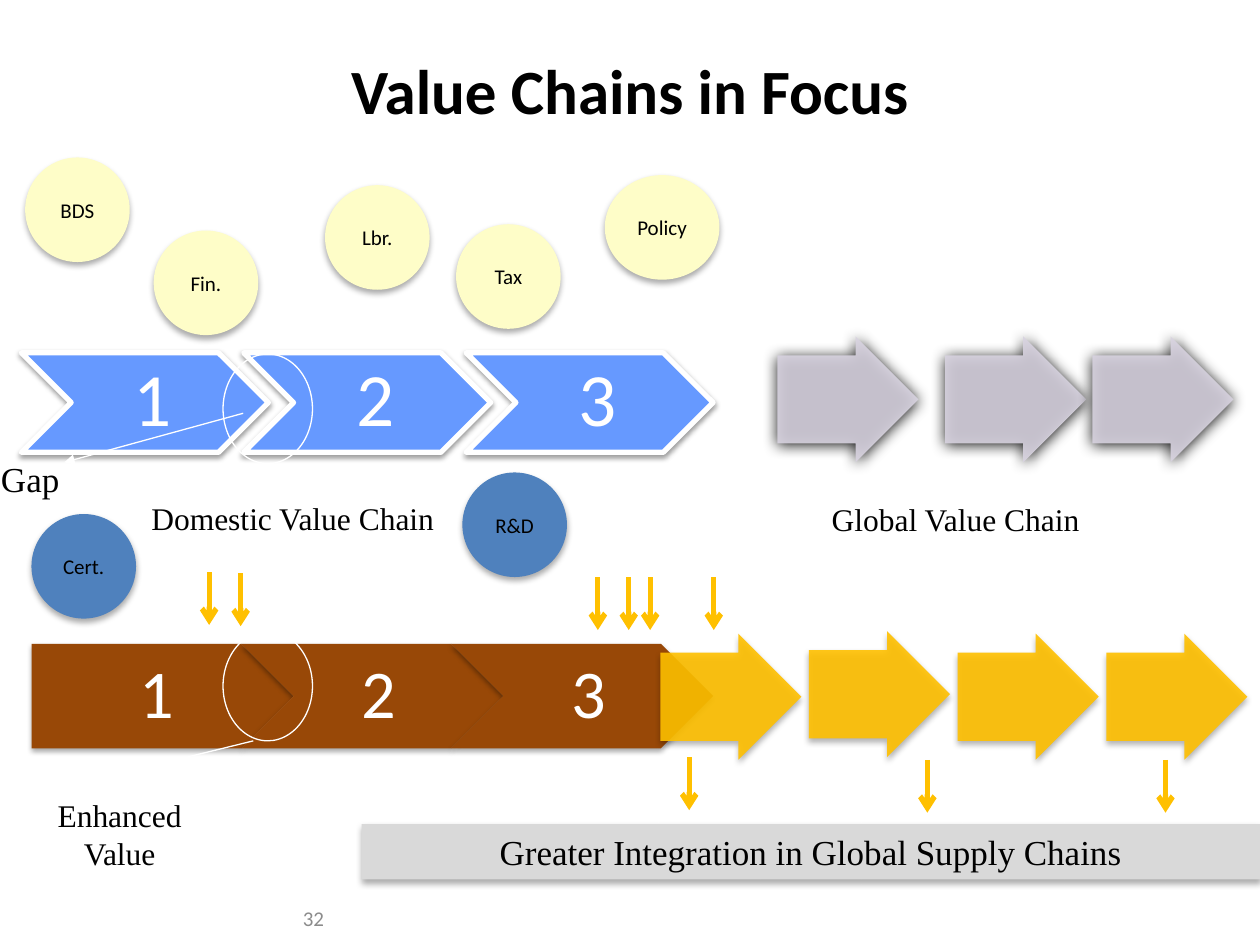
from lxml.etree import SubElement
from pptx import Presentation
from pptx.dml.color import RGBColor
from pptx.enum.shapes import MSO_CONNECTOR as Link, MSO_SHAPE as Shape
from pptx.enum.text import MSO_ANCHOR as Anchor, PP_ALIGN as Align
from pptx.oxml.ns import qn
from pptx.util import Inches, Pt

# Grid of square cells, 100 columns by 75 rows
CELL = Inches(0.1)
COLUMNS, ROWS = 100, 75

COLORS = {
    "text": "000000", "white": "FFFFFF", "page_number": "8C8C8C",
    "domestic": "6699FF", "enhanced": "984807", "global": "D8D3E0",
    "gold": "FFC000", "service": "FEFDC8", "support": "4F81BD",
    "banner": "D9D9D9",
}
SANS, SERIF = "Calibri", "Times New Roman"

# Shadows: opacity %, blur pt, distance pt
SOFT = (32, 3.5, 2.2)
DOMESTIC_SHADOW = (38, 3.1, 1.6)
ENHANCED_SHADOW = (35, 3.1, 1.8)
GLOBAL_SHADOW = (100, 8.5, 1)


def cells(*counts):
    return [int(count * CELL) for count in counts]


def rgb(name):
    return RGBColor.from_string(COLORS[name])


def write(frame, text, size, font=SANS, color="text", align=Align.CENTER,
          anchor=Anchor.MIDDLE, bold=False, wrap=True):
    frame.word_wrap = wrap
    frame.vertical_anchor = anchor
    frame.text = text
    for line in frame.paragraphs:
        line.alignment = align
        line.font.size, line.font.name, line.font.bold = Pt(size), font, bold
        line.font.color.rgb = rgb(color)


def add_label(slide, box, text, size, **style):
    label = slide.shapes.add_textbox(*cells(*box))
    write(label.text_frame, text, size, **style)


def set_shadow(shape, opacity, blur, distance):
    effects = shape._element.spPr.find(qn("a:effectLst"))
    outer = SubElement(effects, qn("a:outerShdw"), blurRad=str(Pt(blur)),
                       dist=str(Pt(distance)), dir="5400000",
                       rotWithShape="0")
    black = SubElement(outer, qn("a:srgbClr"), val=COLORS["text"])
    SubElement(black, qn("a:alpha"), val=str(opacity * 1000))


def add_figure(slide, kind, box, fill=None, line=None, shadow=None):
    figure = slide.shapes.add_shape(kind, *cells(*box))
    figure.shadow.inherit = False
    if fill:
        figure.fill.solid()
        figure.fill.fore_color.rgb = rgb(fill)
    else:
        figure.fill.background()
    if line:
        color, width = line
        figure.line.color.rgb = rgb(color)
        figure.line.width = Pt(width)
    else:
        figure.line.fill.background()
    if shadow:
        set_shadow(figure, *shadow)
    return figure


def add_chain(slide, left, top, size, pitch, first_kind, number_size, margins,
              **look):
    for step in range(3):
        kind = Shape.CHEVRON if step else first_kind
        link = add_figure(slide, kind, (left + step * pitch, top, *size),
                          **look)
        frame = link.text_frame
        frame.margin_left, frame.margin_right = Inches(margins[0]), Inches(0.06)
        frame.margin_top = frame.margin_bottom = Inches(margins[1])
        write(frame, str(step + 1), number_size, color="white")
        frame.paragraphs[0].line_spacing = 0.9


def add_block_arrow(slide, left, top, fill, shadow):
    arrow = add_figure(slide, Shape.RIGHT_ARROW, (left, top, 11.2, 10),
                       fill=fill, shadow=shadow)
    arrow.adjustments[0], arrow.adjustments[1] = 0.7, 0.5
    color = arrow.fill._xPr.find(qn("a:solidFill"))[0]
    SubElement(color, qn("a:alpha"), val="90000")


def add_bubble(slide, left, top, text, fill, width=8.3):
    bubble = add_figure(slide, Shape.OVAL, (left, top, width, 8.3),
                        fill=fill, shadow=SOFT)
    frame = bubble.text_frame
    frame.margin_left = frame.margin_right = 0
    write(frame, text, 12)


def add_arrow_line(slide, start, end, color, width, head):
    arrow = slide.shapes.add_connector(Link.STRAIGHT, *cells(*start, *end))
    arrow.line.color.rgb = rgb(color)
    arrow.line.width = Pt(width)
    SubElement(arrow.line._get_or_add_ln(), qn("a:tailEnd"), type=head)
    SubElement(arrow._element.spPr, qn("a:effectLst"))


def main():
    deck = Presentation()
    deck.slide_width, deck.slide_height = cells(COLUMNS, ROWS)
    slide = deck.slides.add_slide(deck.slide_layouts[6])

    # Title
    add_label(slide, (5, 0.8, 90, 12.5), "Value Chains in Focus", 36,
              bold=True)

    # Domestic and enhanced value chains
    add_chain(slide, 1.7, 28, (19.6, 7.9), 17.65, Shape.CHEVRON, 43,
              (0.19, 0.06), fill="domestic", line=("white", 3),
              shadow=DOMESTIC_SHADOW)
    add_chain(slide, 2.5, 51.1, (20.8, 8.3), 16.65, Shape.PENTAGON, 39,
              (0.17, 0.11), fill="enhanced", shadow=ENHANCED_SHADOW)

    # Global value chain
    for left in (61.7, 75, 86.7):
        add_block_arrow(slide, left, 26.7, "global", GLOBAL_SHADOW)
    for step, top in enumerate((50.3, 50.1, 50.3, 50.3)):
        add_block_arrow(slide, 52.4 + 11.8 * step, top, "gold", SOFT)

    # Services around the chains
    for left, top, name in ((2, 12.5, "BDS"), (12.2, 18.3, "Fin."),
                            (25.8, 14.7, "Lbr."), (36.2, 17.8, "Tax")):
        add_bubble(slide, left, top, name, "service")
    add_bubble(slide, 48, 13.9, "Policy", "service", width=9.1)
    for left, top, name in ((36.7, 37.5, "R&D"), (2.5, 40.8, "Cert.")):
        add_bubble(slide, left, top, name, "support")

    # Chain captions
    captions = {"font": SERIF, "anchor": Anchor.TOP}
    add_label(slide, (64.2, 39.2, 23.3, 4), "Global Value Chain", 18,
              **captions)
    add_label(slide, (9.1, 39.1, 28.9, 4), "Domestic Value Chain ", 18,
              **captions)
    add_label(slide, (-0.9, 35.8, 6.7, 4.4), "Gap", 20, align=Align.LEFT,
              wrap=False, **captions)
    add_label(slide, (3.5, 62.7, 12, 7.1), "Enhanced \nValue", 18,
              wrap=False, **captions)

    # Gaps between the first two links
    for top, start, end in ((28.1, (19.3, 32.8), (5.1, 36.7)),
                            (50.1, (20.1, 58.8), (7.5, 61.9))):
        add_figure(slide, Shape.OVAL, (17.7, top, 7.1, 8.7),
                   line=("white", 0.75))
        add_arrow_line(slide, start, end, "white", 0.75, "triangle")

    # Integration banner
    banner = add_figure(slide, Shape.RECTANGLE, (28.7, 65.4, 71.3, 4.4),
                        fill="banner", shadow=SOFT)
    write(banner.text_frame, "Greater Integration in Global Supply Chains",
          20, **captions)

    # Inputs into the enhanced chain and flows to the banner
    for column, row in ((16.6, 45.4), (19.1, 45.5), (47.45, 45.8),
                        (49.9, 45.8), (51.6, 45.8), (56.65, 45.8),
                        (54.7, 60.1), (73.6, 60.3), (92.5, 60.3)):
        add_arrow_line(slide, (column, row), (column, row + 4.2),
                       "gold", 3, "arrow")

    # Page number
    add_label(slide, (5.9, 71.1, 20.8, 3.6), "32", 12, color="page_number",
              align=Align.RIGHT)

    deck.save("out.pptx")


if __name__ == "__main__":
    main()
